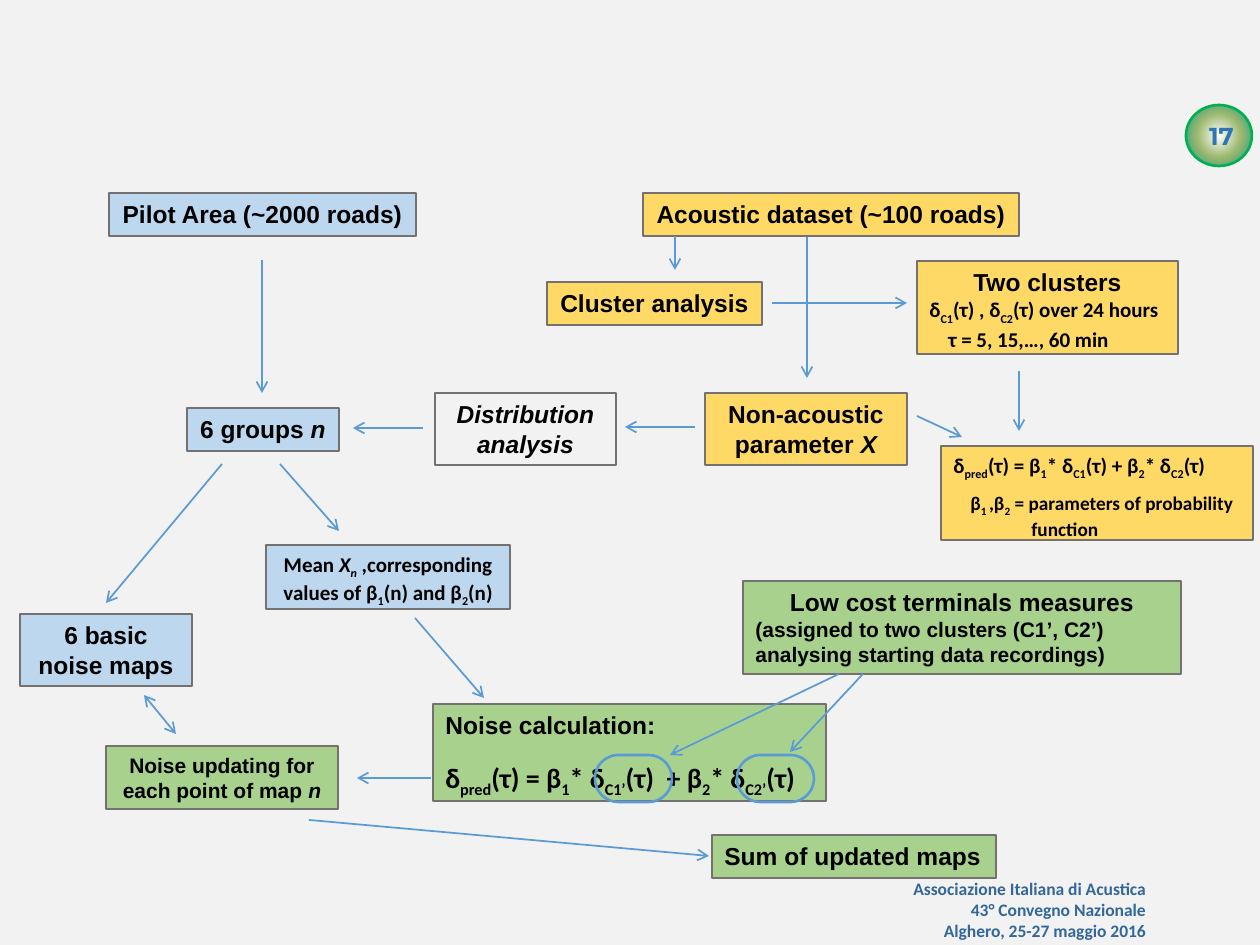
from lxml.etree import SubElement
from pptx import Presentation
from pptx.dml.color import RGBColor
from pptx.enum.shapes import MSO_CONNECTOR, MSO_SHAPE
from pptx.enum.text import MSO_ANCHOR, MSO_AUTO_SIZE, PP_ALIGN
from pptx.oxml import parse_xml
from pptx.oxml.ns import nsdecls, qn
from pptx.util import Pt

PX = 7257
BLUE, GOLD, GREEN = "BDD7EE", "FFD966", "A9D18E"
GREY, LINE = "767171", "5B9BD5"
SIDES = {"l": PP_ALIGN.LEFT, "c": PP_ALIGN.CENTER, "r": PP_ALIGN.RIGHT, "j": PP_ALIGN.JUSTIFY}


def hue(code):
    return RGBColor.from_string(code)


def write(frame, text, size=14, font="Arial", color="000000", side="c",
          before=0, after=0, indent=0, drop=25):
    para = frame.add_paragraph() if frame.text else frame.paragraphs[0]
    para.alignment = SIDES[side]
    para.space_before, para.space_after = Pt(before), Pt(after)
    if indent:
        para._p.get_or_add_pPr().set("marL", str(indent * PX))
    for i, part in enumerate(text.split("^")):
        for j, bit in enumerate(part.split("|")):
            if not bit:
                continue
            run = para.add_run()
            run.text = bit
            run.font.size, run.font.name = Pt(size), font
            run.font.bold, run.font.italic = True, i % 2 == 1
            run.font.color.rgb = hue(color)
            if j % 2:
                run._r.get_or_add_rPr().set("baseline", str(-drop * 1000))


deck = Presentation()
deck.slide_width, deck.slide_height = 1260 * PX, 945 * PX
slide = deck.slides.add_slide(deck.slide_layouts[6])
slide.background.fill.solid()
slide.background.fill.fore_color.rgb = hue("F2F2F2")
shapes = slide.shapes

badge = shapes.add_shape(MSO_SHAPE.OVAL, 1186 * PX, 105 * PX, 66 * PX, 61 * PX)
badge.shadow.inherit = False
badge.line.color.rgb, badge.line.width = hue("00B050"), Pt(1.5)
stops = "".join(
    f'<a:gs pos="{pos * 1000}"><a:srgbClr val="{code}"/></a:gs>'
    for pos, code in [(0, "FFFFFF"), (50, "9CB86E"), (100, "009999")])
badge._element.spPr.find(qn("a:prstGeom")).addnext(parse_xml(
    f'<a:gradFill {nsdecls("a")} rotWithShape="1"><a:gsLst>{stops}</a:gsLst><a:path path="circle">'
    '<a:fillToRect l="50000" t="50000" r="50000" b="50000"/></a:path></a:gradFill>'))

labels = [
    ((1188, 115, 67, 43), ["17"], dict(font="Montserrat", color="2E75B6")),
    ((725, 872, 433, 77),
     ["Associazione Italiana di Acustica", "43° Convegno Nazionale", "Alghero, 25-27 maggio 2016"],
     dict(size=10, font="Calibri", color="336699", side="r")),
]
for spot, lines, look in labels:
    frame = shapes.add_textbox(*[n * PX for n in spot]).text_frame
    frame.word_wrap = True
    for text in lines:
        write(frame, text, **look)

small = dict(size=12, font="Calibri")
left = dict(small, side="l", drop=30)
just = dict(font="Calibri", side="j")
boxes = [
    ((109, 193, 307, 43), BLUE, False, [("Pilot Area (~2000 roads)", {})]),
    ((266, 545, 244, 64), BLUE, True,
     [("Mean ^X|n|^ ,corresponding values of β|1|(n) and β|2|(n)", small)]),
    ((712, 835, 284, 43), GREEN, False, [("Sum of updated maps", dict(side="l"))]),
    ((743, 581, 438, 93), GREEN, True, [
        ("Low cost terminals measures", {}),
        ("(assigned to two clusters (C1’, C2’) analysing starting data recordings)",
         dict(size=12, side="l"))]),
    ((643, 193, 376, 43), GOLD, False, [("Acoustic dataset (~100 roads)", {})]),
    ((435, 393, 181, 72), None, True, [("^Distribution analysis^", {})]),
    ((547, 282, 215, 43), GOLD, False, [("Cluster analysis", {})]),
    ((917, 261, 261, 93), GOLD, False, [
        ("Two clusters", {}),
        ("δ|C1|(τ) , δ|C2|(τ) over 24 hours", left),
        ("τ = 5, 15,…, 60 min", dict(left, indent=19))]),
    ((705, 393, 202, 72), GOLD, True, [("Non-acoustic parameter ^X^", {})]),
    ((187, 408, 152, 43), BLUE, False, [("6 groups ^n^", {})]),
    ((433, 704, 393, 97), GREEN, False, [
        ("Noise calculation:", dict(side="j", after=6)),
        ("δ|pred|(τ) = β|1|* δ|C1’|(τ)  + β|2|* δ|C2’|(τ)", dict(just, size=16, before=6))]),
    ((20, 614, 172, 72), BLUE, True, [("6 basic noise maps", {})]),
    ((106, 746, 232, 63), GREEN, True,
     [("Noise updating for each point of map ^n^", dict(size=12))]),
    ((941, 446, 312, 94), GOLD, True, [
        ("δ|pred|(τ) = β|1|* δ|C1|(τ) + β|2|* δ|C2|(τ)", dict(just, size=12, after=6)),
        ("β|1 |,β|2| = parameters of probability", dict(just, size=11, indent=17)),
        ("function", dict(just, size=11, indent=78))]),
]
for spot, fill, wrap, lines in boxes:
    box = shapes.add_shape(MSO_SHAPE.RECTANGLE, *[n * PX for n in spot])
    box.shadow.inherit = False
    if fill:
        box.fill.solid()
        box.fill.fore_color.rgb = hue(fill)
    else:
        box.fill.background()
    box.line.color.rgb, box.line.width = hue(GREY), Pt(0.75)
    frame = box.text_frame
    frame.word_wrap, frame.vertical_anchor = wrap, MSO_ANCHOR.TOP
    frame.auto_size = MSO_AUTO_SIZE.SHAPE_TO_FIT_TEXT
    for text, look in lines:
        write(frame, text, **look)

for x in (595, 737):
    ring = shapes.add_shape(MSO_SHAPE.ROUNDED_RECTANGLE, x * PX, 755 * PX, 77 * PX, 47 * PX)
    ring.adjustments[0] = 0.5
    ring.shadow.inherit = False
    ring.fill.background()
    ring.line.color.rgb, ring.line.width = hue(LINE), Pt(1.5)

arrows = [
    (262, 260, 262, 393, "tail"),
    (839, 674, 670, 755, "tail"),
    (222, 464, 106, 603, "tail"),
    (431, 778, 357, 778, "tail"),
    (280, 464, 339, 531, "tail"),
    (415, 618, 484, 698, "tail"),
    (675, 236, 675, 270, "tail"),
    (807, 237, 807, 378, "tail"),
    (423, 428, 353, 428, "tail"),
    (772, 303, 907, 303, "tail"),
    (695, 427, 625, 427, "tail"),
    (1019, 371, 1019, 431, "tail"),
    (917, 416, 962, 437, "tail"),
    (144, 695, 176, 734, "head tail"),
    (309, 820, 709, 856, "tail"),
    (863, 674, 790, 752, "tail"),
]
for *ends, tips in arrows:
    arrow = shapes.add_connector(MSO_CONNECTOR.STRAIGHT, *[n * PX for n in ends])
    arrow.line.color.rgb, arrow.line.width = hue(LINE), Pt(1)
    for tip in tips.split():
        SubElement(arrow.line._get_or_add_ln(), qn(f"a:{tip}End"), type="arrow")
    SubElement(arrow._element.spPr, qn("a:effectLst"))

deck.save("out.pptx")
